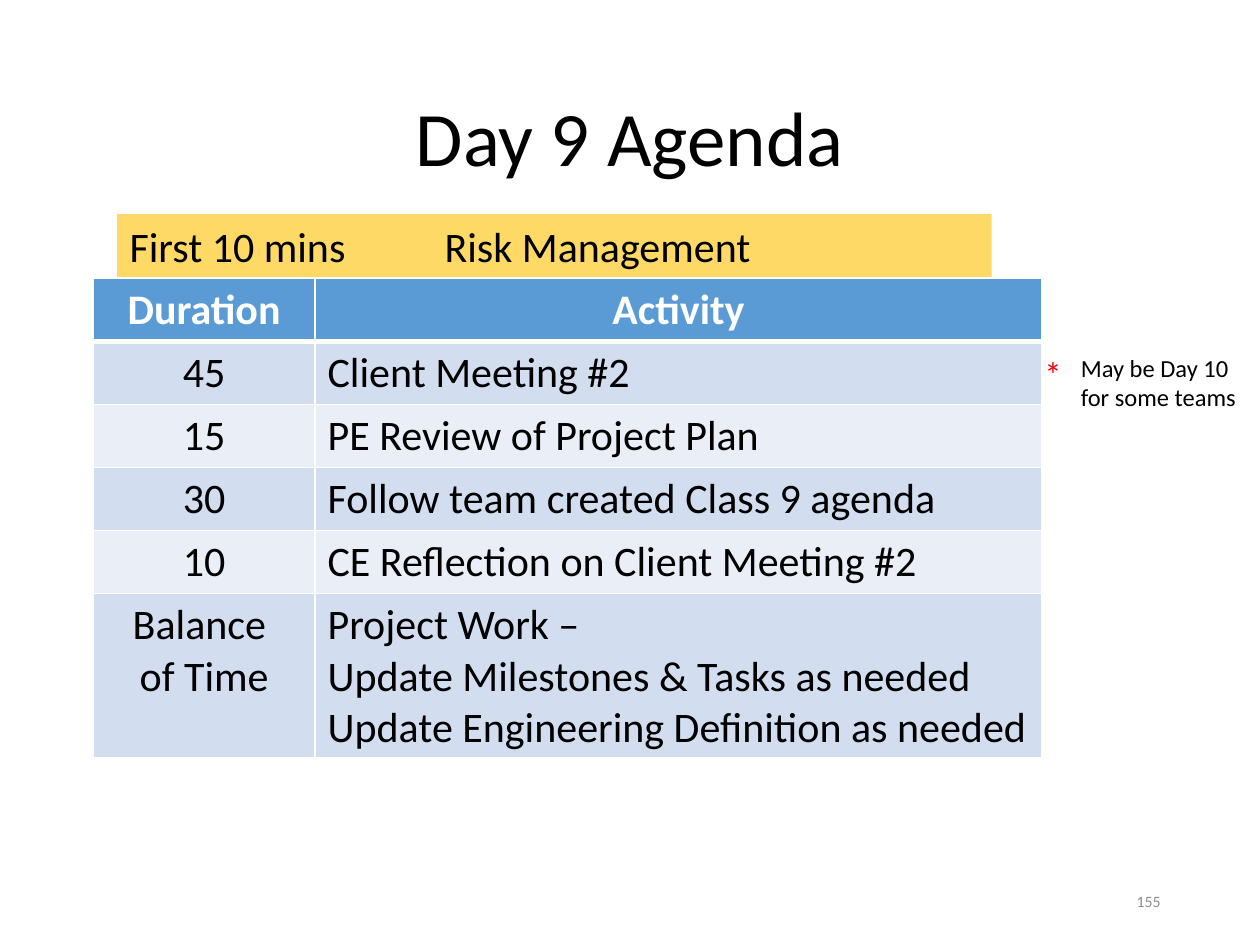
from lxml.etree import SubElement
from pptx import Presentation
from pptx.dml.color import RGBColor
from pptx.enum.shapes import MSO_SHAPE
from pptx.enum.text import MSO_ANCHOR, PP_ALIGN
from pptx.oxml.ns import qn
from pptx.util import Inches, Pt

BLACK = RGBColor(0x00, 0x00, 0x00)
WHITE = RGBColor(0xFF, 0xFF, 0xFF)
GRAY = RGBColor(0x8C, 0x8C, 0x8C)
RED = RGBColor(0xFF, 0x00, 0x00)
GOLD = RGBColor(0xFF, 0xD9, 0x66)
HEADER_BLUE = RGBColor(0x5B, 0x9B, 0xD5)
BANDS = [RGBColor(0xD2, 0xDE, 0xEF), RGBColor(0xEA, 0xEF, 0xF7)]

TITLE = "Day 9 Agenda"
OPENING = "First 10 mins\t\tRisk Management"
AGENDA = [
    ("Duration", "Activity"),
    ("45", "Client Meeting #2"),
    ("15", "PE Review of Project Plan"),
    ("30", "Follow team created Class 9 agenda"),
    ("10", "CE Reflection on Client Meeting #2"),
    ("Balance \nof Time",
     "Project Work –\nUpdate Milestones & Tasks as needed\n"
     "Update Engineering Definition as needed"),
]
COLUMN_WIDTHS = [1.76, 5.77]
LINE_HEIGHT = 0.4
CELL_PADDING = 0.1
NOTE = "May be Day 10 for some teams"
PAGE_NUMBER = "155"


def write(frame, text, size=24, color=BLACK, bold=False, align=PP_ALIGN.LEFT,
          anchor=MSO_ANCHOR.TOP, spacing=None):
    """Fill a text frame, one paragraph per line of text."""
    frame.word_wrap = True
    frame.vertical_anchor = anchor
    for index, line in enumerate(text.split("\n")):
        paragraph = frame.add_paragraph() if index else frame.paragraphs[0]
        paragraph.alignment = align
        paragraph.line_spacing = spacing
        run = paragraph.add_run()
        run.text = line
        run.font.name = "Calibri"
        run.font.size = Pt(size)
        run.font.bold = bold
        run.font.color.rgb = color


def add_text(slide, box, text, **text_format):
    textbox = slide.shapes.add_textbox(*map(Inches, box))
    write(textbox.text_frame, text, **text_format)


def add_borders(cell, **widths):
    """Draw white cell borders; widths in points, keyed by side in schema order."""
    properties = cell._tc.get_or_add_tcPr()
    for side, width in widths.items():
        line = SubElement(properties, qn(f"a:ln{side}"), w=str(Pt(width)))
        fill = SubElement(line, qn("a:solidFill"))
        SubElement(fill, qn("a:srgbClr"), val=str(WHITE))


def add_agenda(slide, left, top):
    heights = [LINE_HEIGHT * (max(text.count("\n") for text in row) + 1) + CELL_PADDING
               for row in AGENDA]
    table = slide.shapes.add_table(
        len(AGENDA), len(COLUMN_WIDTHS), Inches(left), Inches(top),
        Inches(sum(COLUMN_WIDTHS)), Inches(sum(heights))).table
    for column, width in zip(table.columns, COLUMN_WIDTHS):
        column.width = Inches(width)
    for r, texts in enumerate(AGENDA):
        table.rows[r].height = Inches(heights[r])
        header = r == 0
        for c, text in enumerate(texts):
            cell = table.cell(r, c)
            add_borders(cell, L=1, R=1, T=3 if r == 1 else 1, B=3 if header else 1)
            cell.fill.solid()
            cell.fill.fore_color.rgb = HEADER_BLUE if header else BANDS[(r - 1) % 2]
            write(cell.text_frame, text, bold=header,
                  color=WHITE if header else BLACK,
                  align=PP_ALIGN.CENTER if header or c == 0 else PP_ALIGN.LEFT)


def add_opening(slide, box):
    banner = slide.shapes.add_shape(MSO_SHAPE.RECTANGLE, *map(Inches, box))
    banner.shadow.inherit = False
    banner.fill.solid()
    banner.fill.fore_color.rgb = GOLD
    banner.line.fill.background()
    write(banner.text_frame, OPENING)


def main():
    presentation = Presentation()
    presentation.slide_width = Inches(10)
    presentation.slide_height = Inches(7.5)
    slide = presentation.slides.add_slide(presentation.slide_layouts[6])

    add_text(slide, (0.69, 0.4, 8.62, 1.45), TITLE, size=44, spacing=0.9,
             align=PP_ALIGN.CENTER, anchor=MSO_ANCHOR.MIDDLE)
    add_text(slide, (7.06, 6.95, 2.25, 0.4), PAGE_NUMBER, size=9, color=GRAY,
             align=PP_ALIGN.RIGHT, anchor=MSO_ANCHOR.MIDDLE)
    add_agenda(slide, 0.74, 2.21)
    add_text(slide, (8.48, 2.75, 1.5, 0.57), NOTE, size=14)
    add_text(slide, (8.19, 2.75, 0.42, 0.44), "*", size=20, color=RED)
    add_opening(slide, (0.93, 1.7, 6.94, 0.5))

    presentation.save("out.pptx")


if __name__ == "__main__":
    main()
